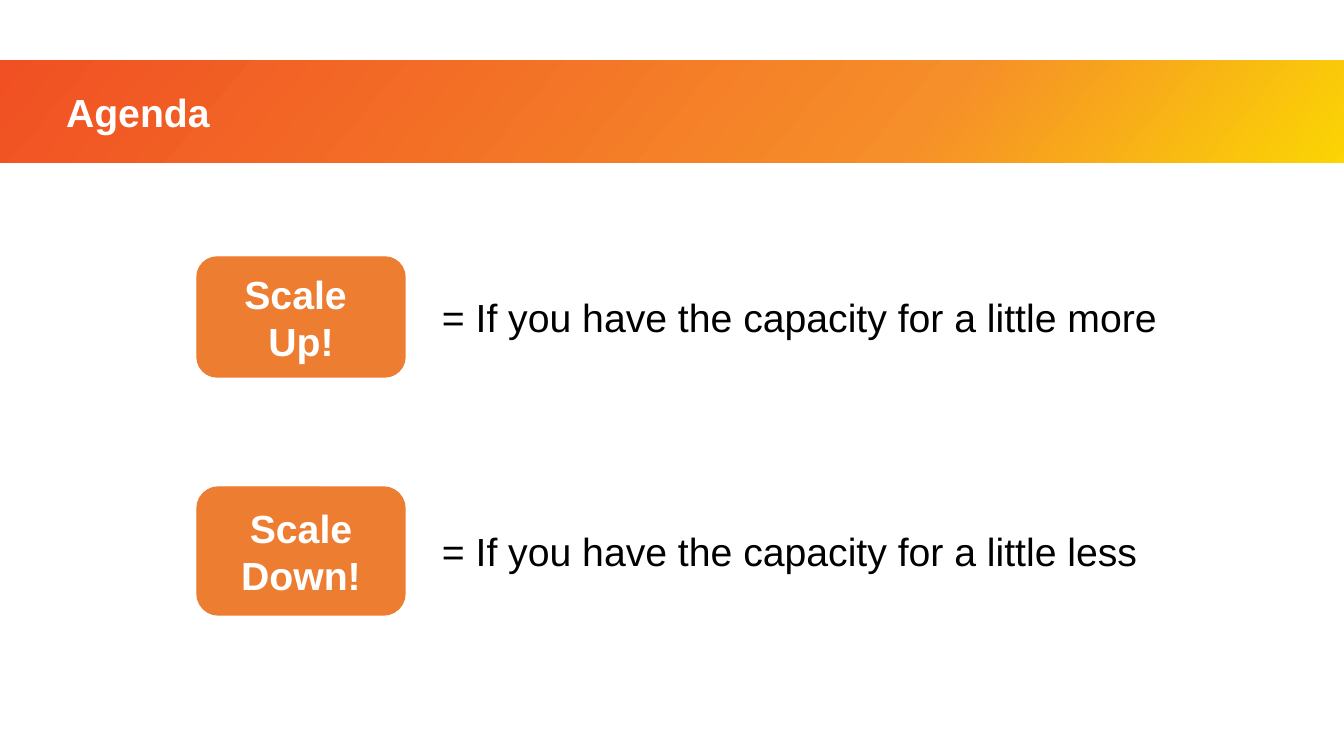
from copy import deepcopy

from pptx import Presentation
from pptx.dml.color import RGBColor
from pptx.enum.shapes import MSO_SHAPE
from pptx.enum.text import MSO_ANCHOR, MSO_AUTO_SIZE, PP_ALIGN
from pptx.oxml.ns import qn
from pptx.util import Pt

RECT, ROUND = MSO_SHAPE.RECTANGLE, MSO_SHAPE.ROUNDED_RECTANGLE
MIDDLE, TOP = MSO_ANCHOR.MIDDLE, MSO_ANCHOR.TOP
LEFT, CENTER = PP_ALIGN.LEFT, PP_ALIGN.CENTER
FIXED, GROW = MSO_AUTO_SIZE.NONE, MSO_AUTO_SIZE.SHAPE_TO_FIT_TEXT

SCALE = 914400 / 100.8
COLORS = {"red": "F05023", "amber": "F68E29", "yellow": "FBD504",
          "orange": "ED7D31", "white": "FFFFFF", "black": "000000"}
BLEND = ((0, "red"), (0.68, "amber"), (1, "yellow"))
ROWS = (
    ((197, 257, 1002, 120), ("Scale ", "Up!"), 31,
     "= If you have the capacity for a little more"),
    ((197, 487, 1002, 128), ("Scale Down!",), 35,
     "= If you have the capacity for a little less"),
)
BOLD = {"name": "Arial", "size": Pt(28), "bold": True}
PLAIN = {"name": "Arial", "size": Pt(28), "bold": False}


def px(*sizes):
    return [round(size * SCALE) for size in sizes]


def color(name):
    return RGBColor.from_string(COLORS[name])


def assign(target, values):
    for key, value in values.items():
        setattr(target, key, value)


def write(frame, lines, look, tint, layout, para):
    assign(frame, {"word_wrap": True, **layout})
    frame.text = "\n".join(lines)
    for item in frame.paragraphs:
        assign(item, para)
        for run in item.runs:
            assign(run.font, look)
            run.font.color.rgb = color(tint)


def add_band(slide, box):
    band = slide.shapes.add_shape(RECT, *px(*box))
    band.shadow.inherit = False
    band.line.fill.background()
    band.fill.gradient()
    band.fill.gradient_angle = 320
    stops = band.fill._xPr.find(".//" + qn("a:gsLst"))
    stops.insert(1, deepcopy(stops[0]))
    for stop, (place, name) in zip(band.fill.gradient_stops, BLEND):
        stop.position = place
        stop.color.rgb = color(name)


def add_head(slide, box):
    left, top, width, height = box
    add_band(slide, box)
    title = slide.shapes.title
    slide.shapes._spTree.append(title._element)
    spot = px(left + 56, top + 14, width - 122, height - 22)
    assign(title, dict(zip(("left", "top", "width", "height"), spot)))
    write(title.text_frame, ["Agenda"], BOLD, "white",
          {"vertical_anchor": MIDDLE, "auto_size": FIXED},
          {"alignment": LEFT, "line_spacing": 0.9})


def add_row(slide, box, label, drop, text):
    left, top, width, height = box
    badge = slide.shapes.add_shape(ROUND, *px(left, top, 208, height))
    badge.shadow.inherit = False
    badge.fill.solid()
    badge.fill.fore_color.rgb = color("orange")
    badge.line.color.rgb = color("orange")
    badge.line.width = Pt(1)
    write(badge.text_frame, label, BOLD, "white",
          {"vertical_anchor": MIDDLE}, {"alignment": CENTER})
    note = slide.shapes.add_textbox(*px(left + 235, top + drop, width - 235, 57))
    write(note.text_frame, [text], PLAIN, "black",
          {"vertical_anchor": TOP, "auto_size": GROW}, {"alignment": LEFT})


def main():
    deck = Presentation()
    deck.slide_width, deck.slide_height = px(1344, 756)
    slide = deck.slides.add_slide(deck.slide_layouts.get_by_name("Title Only"))
    add_head(slide, (0, 60, 1344, 103))
    for row in ROWS:
        add_row(slide, *row)
    deck.save("out.pptx")


if __name__ == "__main__":
    main()
